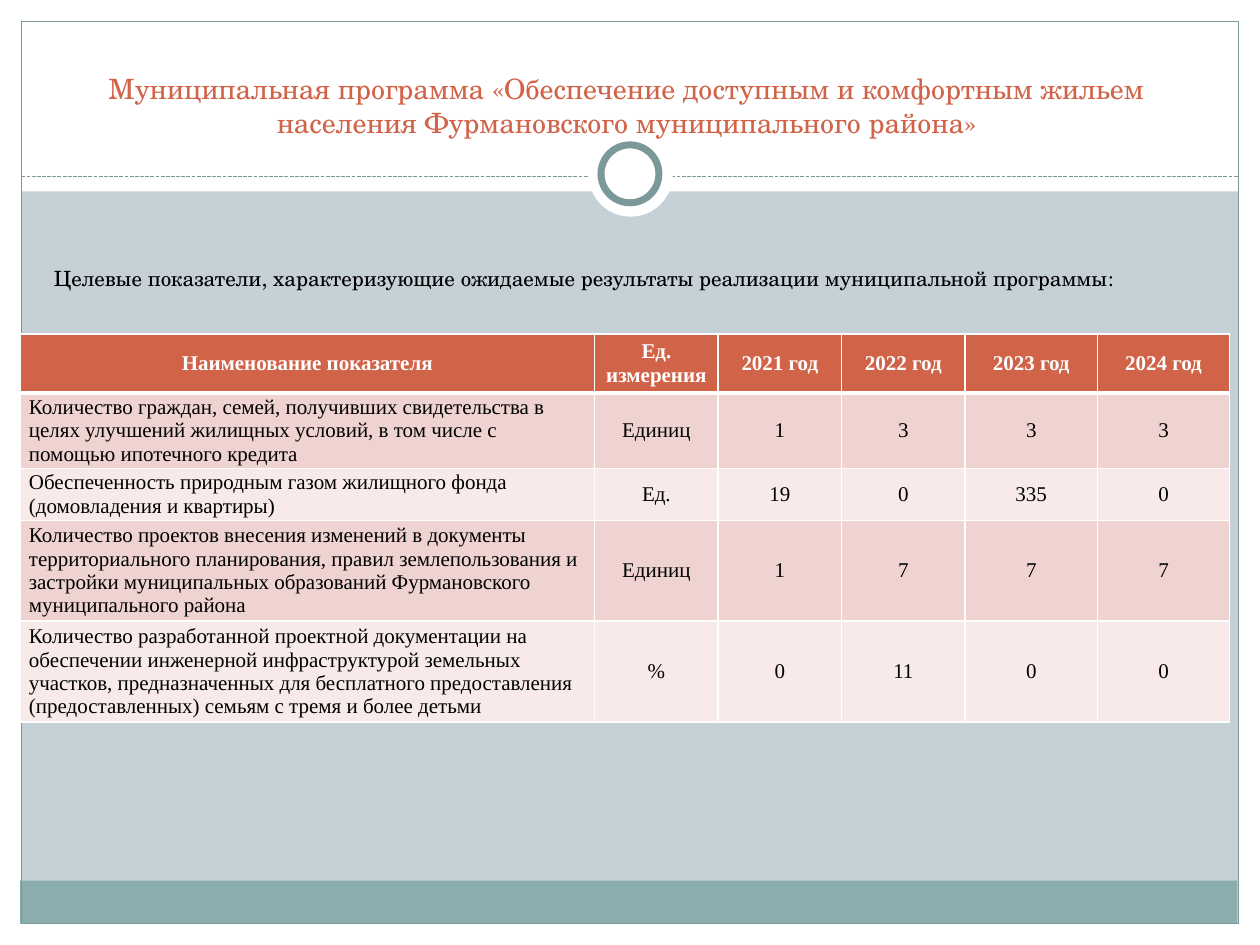
from lxml import etree
from pptx import Presentation
from pptx.dml.color import RGBColor
from pptx.enum.dml import MSO_LINE_DASH_STYLE as Dash
from pptx.enum.shapes import MSO_CONNECTOR as Connector, MSO_SHAPE as Shape
from pptx.enum.text import MSO_ANCHOR as Anchor, PP_ALIGN as Align
from pptx.oxml import parse_xml
from pptx.oxml.ns import nsdecls, qn
from pptx.util import Inches, Pt

COLORS = {
    "background": "C5D1D7",
    "white": "FFFFFF",
    "footer": "8CADAE",
    "line": "7C999A",
    "accent": "D16349",
    "text": "000000",
    "odd": "EED3D0",
    "even": "F7EAE9",
}


def color(name):
    return RGBColor.from_string(COLORS[name])


def add_text(box, text, size, color_name, align, anchor):
    left, top, width, height = map(Inches, box)
    frame = slide.shapes.add_textbox(left, top, width, height).text_frame
    frame.word_wrap = True
    frame.vertical_anchor = anchor
    paragraph = frame.paragraphs[0]
    paragraph.text = text
    paragraph.alignment = align
    paragraph.font.name = "TeX Gyre Schola"
    paragraph.font.size = Pt(size)
    paragraph.font.color.rgb = color(color_name)


presentation = Presentation()
presentation.slide_width = Inches(10)
presentation.slide_height = Inches(7.5)
slide = presentation.slides.add_slide(presentation.slide_layouts[6])
slide.background.fill.solid()
slide.background.fill.fore_color.rgb = color("background")

divider = slide.shapes.add_connector(
    Connector.STRAIGHT, Inches(0.17), Inches(1.4), Inches(9.83), Inches(1.4)
)
divider.line.color.rgb = color("line")
divider.line.width = Pt(0.75)
divider.line.dash_style = Dash.SQUARE_DOT
divider.line._get_or_add_ln().find(qn("a:prstDash")).set("val", "sysDash")
etree.SubElement(divider._element.spPr, qn("a:effectLst"))

decorations = [
    (Shape.RECTANGLE, (0, 7.33, 10, 0.17), "white", None),
    (Shape.RECTANGLE, (0, 0, 10, 1.52), "white", None),
    (Shape.RECTANGLE, (0, 0, 0.17, 7.5), "white", None),
    (Shape.RECTANGLE, (9.83, 0, 0.17, 7.5), "white", None),
    (Shape.RECTANGLE, (0.16, 6.99, 9.66, 0.34), "footer", None),
    (Shape.RECTANGLE, (0.17, 0.17, 9.66, 7.16), None, 0.75),
    (Shape.OVAL, (4.67, 1.05, 0.67, 0.67), "white", None),
    (Shape.OVAL, (4.77, 1.15, 0.46, 0.46), "white", 4),
]
for kind, box, fill, line_width in decorations:
    shape = slide.shapes.add_shape(kind, *map(Inches, box))
    shape.shadow.inherit = False
    if fill:
        shape.fill.solid()
        shape.fill.fore_color.rgb = color(fill)
    else:
        shape.fill.background()
    if line_width:
        shape.line.color.rgb = color("line")
        shape.line.width = Pt(line_width)
    else:
        shape.line.fill.background()
    if box == (0.17, 0.17, 9.66, 7.16):
        shape._element.addnext(divider._element)

add_text(
    (0.31, 0.62, 9.33, 0.53),
    "Муниципальная программа «Обеспечение доступным и комфортным жильем "
    "населения Фурмановского муниципального района»",
    16, "accent", Align.CENTER, Anchor.BOTTOM,
)
add_text(
    (0.33, 2.06, 9.3, 0.3),
    "Целевые показатели, характеризующие ожидаемые результаты реализации "
    "муниципальной программы:",
    12, "text", Align.LEFT, Anchor.TOP,
)

rows = [
    ("Наименование показателя", "Ед. измерения", "2021 год", "2022 год", "2023 год", "2024 год"),
    ("Количество граждан, семей, получивших свидетельства в целях улучшений жилищных "
     "условий, в том числе с помощью ипотечного кредита", "Единиц", "1", "3", "3", "3"),
    ("Обеспеченность природным газом жилищного фонда (домовладения и квартиры)",
     "Ед.", "19", "0", "335", "0"),
    ("Количество проектов внесения изменений в документы территориального планирования, "
     "правил землепользования и застройки муниципальных образований Фурмановского "
     "муниципального района", "Единиц", "1", "7", "7", "7"),
    ("Количество разработанной проектной документации на обеспечении инженерной "
     "инфраструктурой земельных участков, предназначенных для бесплатного предоставления "
     "(предоставленных) семьям с тремя и более детьми", "%", "0", "11", "0", "0"),
]
column_widths = [4.56, 0.98, 0.98, 0.98, 1.05, 1.05]

table_shape = slide.shapes.add_table(
    len(rows), len(column_widths), Inches(0.16), Inches(2.65), Inches(9.61), Inches(3.08)
)
table = table_shape.table
for column, width in zip(table.columns, column_widths):
    column.width = Inches(width)

for row_index, values in enumerate(rows):
    is_header = row_index == 0
    table.rows[row_index].height = Inches(0.47 if is_header else 0.41)
    fill = "accent" if is_header else "odd" if row_index % 2 else "even"
    for column_index, value in enumerate(values):
        cell = table.cell(row_index, column_index)
        cell.margin_left = cell.margin_right = Inches(0.07)
        cell.margin_top = cell.margin_bottom = 0
        cell.vertical_anchor = Anchor.MIDDLE
        for side in "LRTB":
            thick = (side == "B" and is_header) or (side == "T" and row_index == 1)
            cell._tc.get_or_add_tcPr().append(parse_xml(
                f'<a:ln{side} {nsdecls("a")} w="{Pt(3 if thick else 1)}"><a:solidFill>'
                f'<a:srgbClr val="{COLORS["white"]}"/></a:solidFill></a:ln{side}>'
            ))
        cell.fill.solid()
        cell.fill.fore_color.rgb = color(fill)
        paragraph = cell.text_frame.paragraphs[0]
        paragraph.text = value
        paragraph.alignment = Align.CENTER if is_header or column_index else Align.LEFT
        paragraph.font.name = "Times New Roman"
        paragraph.font.size = Pt(12)
        paragraph.font.bold = is_header
        paragraph.font.color.rgb = color("white" if is_header else "text")
table_shape.height = Inches(3.08)

presentation.save("out.pptx")
